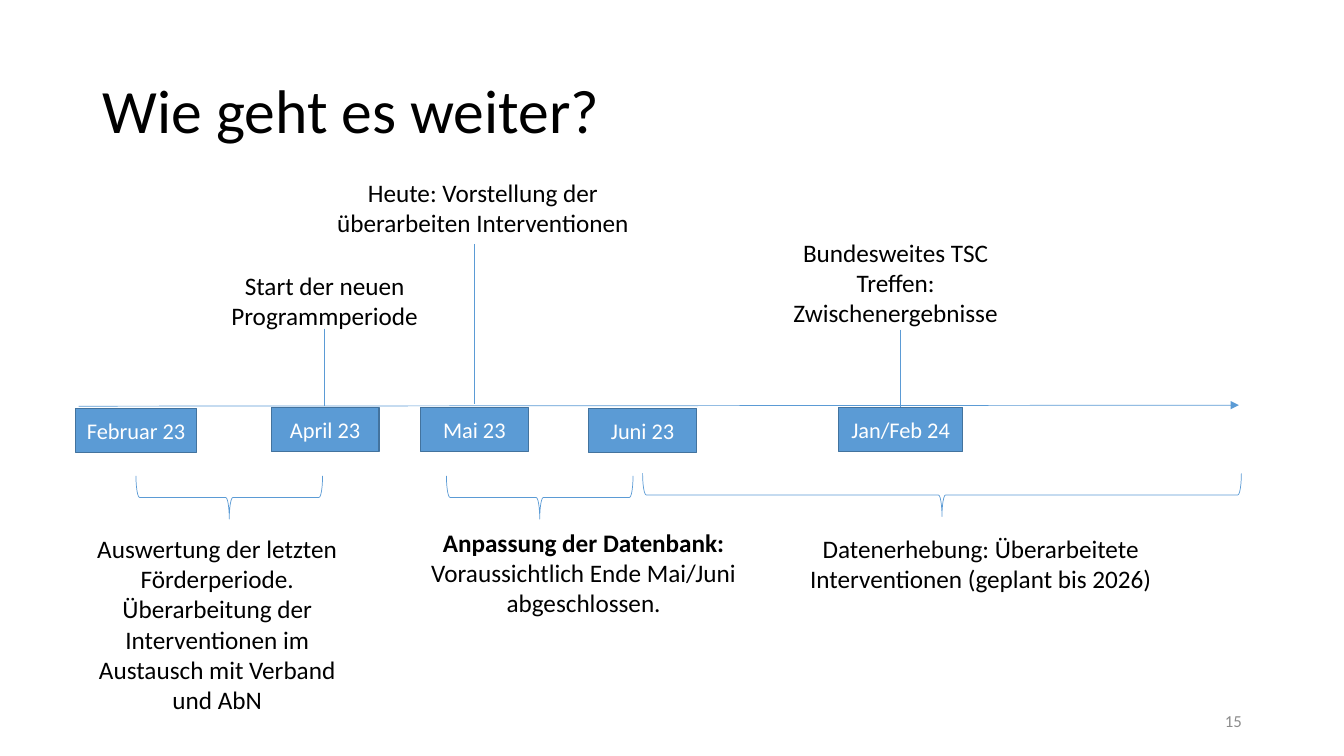
from dataclasses import dataclass

import pptx
import pptx.dml.color
import pptx.enum.shapes
import pptx.enum.text
import pptx.oxml.ns
import pptx.util
from lxml import etree

SHAPES = pptx.enum.shapes.MSO_SHAPE
ALIGN = pptx.enum.text.PP_ALIGN
ANCHOR = pptx.enum.text.MSO_ANCHOR
COLOURS = {
    "text": "000000",
    "page_number": "8C8C8C",
    "month_text": "FFFFFF",
    "accent": "5B9BD5",
    "month_border": "43739E",
}
FONT = "Calibri"
SLIDE_WIDTH = pptx.util.Inches(13.333)
SLIDE_HEIGHT = pptx.util.Inches(7.5)
HAIRLINE = 0.5
MONTH_HEIGHT = 5.87
BRACE_DEPTH = 5.73


# All positions and sizes are percentages of the slide's width or height.
@dataclass(frozen=True)
class Area:
    left: float
    top: float
    width: float
    height: float


@dataclass(frozen=True)
class Month:
    label: str
    left: float
    top: float
    width: float = 8.03


@dataclass(frozen=True)
class Marker:
    x: float
    top: float
    bottom: float


@dataclass(frozen=True)
class Brace:
    centre: float
    middle: float
    span: float = 13.88


@dataclass(frozen=True)
class Note:
    area: Area
    paragraphs: tuple[str, ...]
    bold_first: bool = False


MONTHS = (
    Month("Februar 23", 5.63, 54, 9),
    Month("April 23", 20.18, 53.87),
    Month("Mai 23", 31.28, 53.87),
    Month("Juni 23", 43.8, 54),
    Month("Jan/Feb 24", 62.4, 53.87, 9.23),
)
MARKERS = (
    Marker(24.15, 43.47, 53.73),
    Marker(35.33, 32.27, 53.47),
    Marker(66.98, 43.6, 53.87),
)
BRACES = (Brace(17.06, 65.8), Brace(40.16, 65.8), Brace(70.09, 65.47, 44.55))
NOTES = (
    Note(Area(16.13, 35.07, 16.05, 9.47), ("Start der neuen Programmperiode",)),
    Note(Area(24, 22.8, 23.85, 9.47), ("Heute: Vorstellung der überarbeiten Interventionen",)),
    Note(Area(57.6, 30.67, 18.08, 13.47), ("Bundesweites TSC Treffen: Zwischenergebnisse",)),
    Note(
        Area(4.95, 69.87, 22.43, 25.6),
        (
            "Auswertung der letzten Förderperiode.",
            "Überarbeitung der Interventionen im Austausch mit Verband und AbN",
        ),
    ),
    Note(
        Area(29.25, 69.07, 28.35, 13.47),
        ("Anpassung der Datenbank:", "Voraussichtlich Ende Mai/Juni abgeschlossen."),
        bold_first=True,
    ),
    Note(
        Area(57.38, 69.87, 31.2, 9.47),
        ("Datenerhebung: Überarbeitete Interventionen (geplant bis 2026)",),
    ),
)


def across(share: float) -> int:
    return round(SLIDE_WIDTH * share / 100)


def down(share: float) -> int:
    return round(SLIDE_HEIGHT * share / 100)


def colour(name: str) -> pptx.dml.color.RGBColor:
    return pptx.dml.color.RGBColor.from_string(COLOURS[name])


def bounds(area: Area) -> tuple[int, int, int, int]:
    return across(area.left), down(area.top), across(area.width), down(area.height)


def write(frame, *paragraphs: str, size: float = 18, ink: str = "text", align=ALIGN.CENTER,
          anchor=ANCHOR.TOP, spacing: float = 1.0, bold_first: bool = False) -> None:
    frame.word_wrap = True
    frame.vertical_anchor = anchor
    for index, text in enumerate(paragraphs):
        para = frame.add_paragraph() if index else frame.paragraphs[0]
        para.alignment = align
        para.line_spacing = spacing
        span = para.add_run()
        span.text = text
        span.font.name = FONT
        span.font.size = pptx.util.Pt(size)
        span.font.bold = bold_first and index == 0
        span.font.color.rgb = colour(ink)


def add_text(page, area: Area, *paragraphs: str, **style) -> None:
    box = page.shapes.add_textbox(*bounds(area))
    write(box.text_frame, *paragraphs, **style)


def outline(shape, ink: str, width: float) -> None:
    shape.line.color.rgb = colour(ink)
    shape.line.width = pptx.util.Pt(width)


def add_line(page, left: float, top: float, right: float, bottom: float, arrow: bool = False) -> None:
    line = page.shapes.add_connector(
        pptx.enum.shapes.MSO_CONNECTOR.STRAIGHT,
        across(left), down(top), across(right), down(bottom),
    )
    outline(line, "accent", HAIRLINE)
    if arrow:
        tip = etree.SubElement(line.line._get_or_add_ln(), pptx.oxml.ns.qn("a:tailEnd"))
        tip.set("type", "triangle")
    etree.SubElement(line._element.spPr, pptx.oxml.ns.qn("a:effectLst"))


def add_month(page, month: Month) -> None:
    area = Area(month.left, month.top, month.width, MONTH_HEIGHT)
    box = page.shapes.add_shape(SHAPES.RECTANGLE, *bounds(area))
    box.shadow.inherit = False
    box.fill.solid()
    box.fill.fore_color.rgb = colour("accent")
    outline(box, "month_border", 1)
    write(box.text_frame, month.label, size=16, ink="month_text", anchor=ANCHOR.MIDDLE)


def add_brace(page, brace: Brace) -> None:
    """Draw a left brace turned so that its point faces down."""
    depth, span = down(BRACE_DEPTH), across(brace.span)
    left = across(brace.centre) - depth // 2
    top = down(brace.middle) - span // 2
    shape = page.shapes.add_shape(SHAPES.LEFT_BRACE, left, top, depth, span)
    shape.rotation = 270
    shape.shadow.inherit = False
    shape.fill.background()
    outline(shape, "accent", HAIRLINE)


def main() -> None:
    deck = pptx.Presentation()
    deck.slide_width, deck.slide_height = SLIDE_WIDTH, SLIDE_HEIGHT
    page = deck.slides.add_slide(deck.slide_layouts[6])

    add_text(page, Area(6.9, 5.33, 86.25, 19.33), "Wie geht es weiter?",
             size=44, align=ALIGN.LEFT, anchor=ANCHOR.MIDDLE, spacing=0.9)
    add_text(page, Area(70.65, 92.67, 22.5, 5.33), "15",
             size=12, ink="page_number", align=ALIGN.RIGHT, anchor=ANCHOR.MIDDLE)
    add_line(page, 5.85, 53.73, 92.18, 53.6, arrow=True)
    for month in MONTHS:
        add_month(page, month)
    for marker in MARKERS:
        add_line(page, marker.x, marker.top, marker.x, marker.bottom)
    for brace in BRACES:
        add_brace(page, brace)
    for note in NOTES:
        add_text(page, note.area, *note.paragraphs, bold_first=note.bold_first)
    deck.save("out.pptx")


if __name__ == "__main__":
    main()
